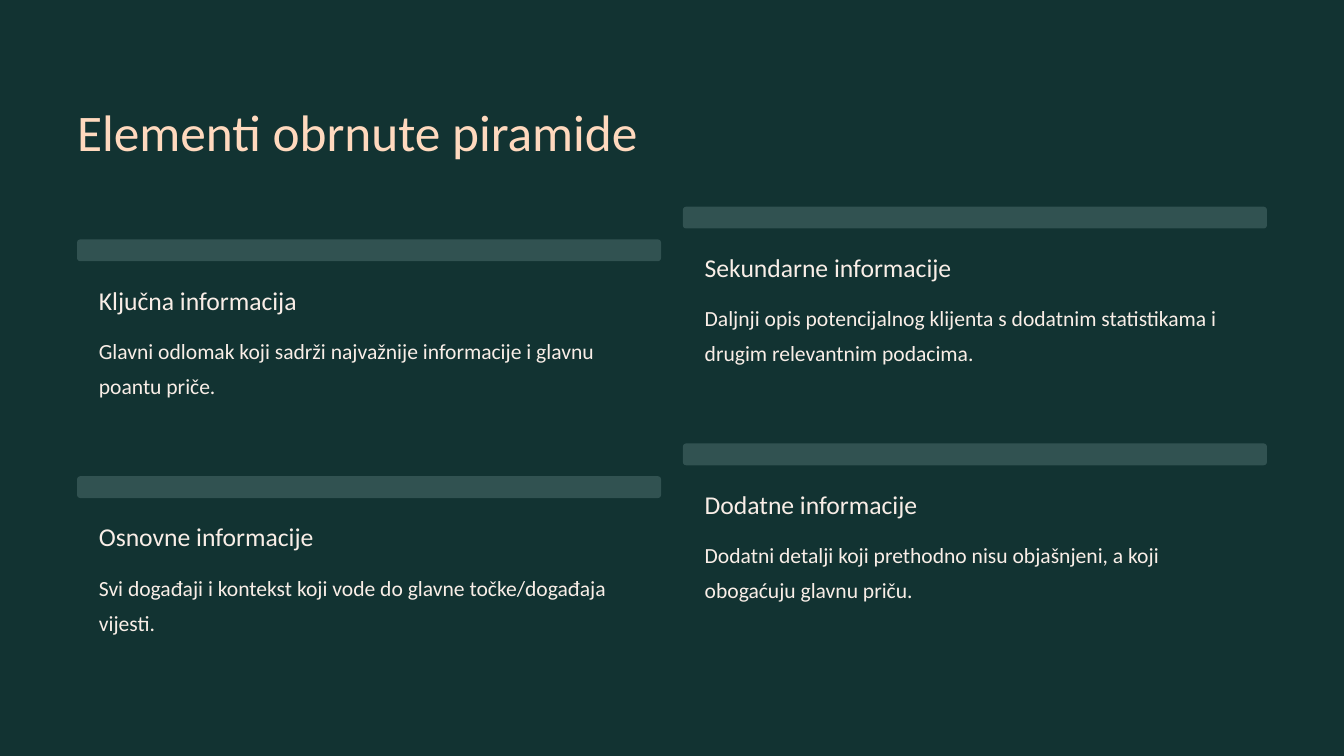
"""Build the slide on the elements of the inverted pyramid."""
from pptx import Presentation
from pptx.dml.color import RGBColor
from pptx.enum.shapes import MSO_SHAPE
from pptx.util import Cm, Pt

ROUNDED = MSO_SHAPE.ROUNDED_RECTANGLE
FONT = "Calibri"
COLORS = {"background": "123332", "title": "FFD9BE", "bar": "315251", "text": "F9EEE7"}

TITLE = "Elementi obrnute piramide"
COLUMNS = [
    [
        ("Ključna informacija",
         "Glavni odlomak koji sadrži najvažnije informacije i glavnu poantu priče."),
        ("Osnovne informacije",
         "Svi događaji i kontekst koji vode do glavne točke/događaja vijesti."),
    ],
    [
        ("Sekundarne informacije",
         "Daljnji opis potencijalnog klijenta s dodatnim statistikama i drugim relevantnim podacima."),
        ("Dodatne informacije",
         "Dodatni detalji koji prethodno nisu objašnjeni, a koji obogaćuju glavnu priču."),
    ],
]

MARGIN = 2.33
BAR_WIDTH, BAR_HEIGHT = 17.66, 0.66
GAP = 0.66
COLUMN_TOPS = [7.24, 6.25]
ROW_PITCH = 7.16


def paint(shape, color):
    shape.fill.solid()
    shape.fill.fore_color.rgb = RGBColor.from_string(COLORS[color])


def add_text(slide, text, place, size, line_spacing, color="text", wrap=False):
    box = slide.shapes.add_textbox(*(Cm(length) for length in place))
    frame = box.text_frame
    frame.margin_left = frame.margin_top = frame.margin_right = frame.margin_bottom = 0
    frame.word_wrap = wrap
    frame.text = text
    para = frame.paragraphs[0]
    para.line_spacing = Pt(line_spacing)
    span = para.runs[0]
    span.font.name = FONT
    span.font.size = Pt(size)
    span.font.color.rgb = RGBColor.from_string(COLORS[color])


def add_bar(slide, left, top):
    bar = slide.shapes.add_shape(ROUNDED, Cm(left), Cm(top), Cm(BAR_WIDTH), Cm(BAR_HEIGHT))
    bar.adjustments[0] = 0.15
    bar.shadow.inherit = False
    paint(bar, "bar")
    bar.line.fill.background()


def add_card(slide, left, top, heading, body):
    text_left = left + GAP
    add_bar(slide, left, top)
    add_text(slide, heading, (text_left, top + 1.32, 8.2, 0.97), 22, 27.5)
    add_text(slide, body, (text_left, top + 2.71, BAR_WIDTH - 2 * GAP, 2.13), 18.5, 30, wrap=True)


def main():
    deck = Presentation()
    deck.slide_width, deck.slide_height = Cm(40.64), Cm(22.86)
    slide = deck.slides.add_slide(deck.slide_layouts[6])
    paint(slide.background, "background")
    add_text(slide, TITLE, (MARGIN, 2.95, 23.62, 1.96), 44, 55, color="title")
    for column, (cards, first_top) in enumerate(zip(COLUMNS, COLUMN_TOPS)):
        left = MARGIN + column * (BAR_WIDTH + GAP)
        for row, (heading, body) in enumerate(cards):
            add_card(slide, left, first_top + row * ROW_PITCH, heading, body)
    deck.save("out.pptx")


if __name__ == "__main__":
    main()
